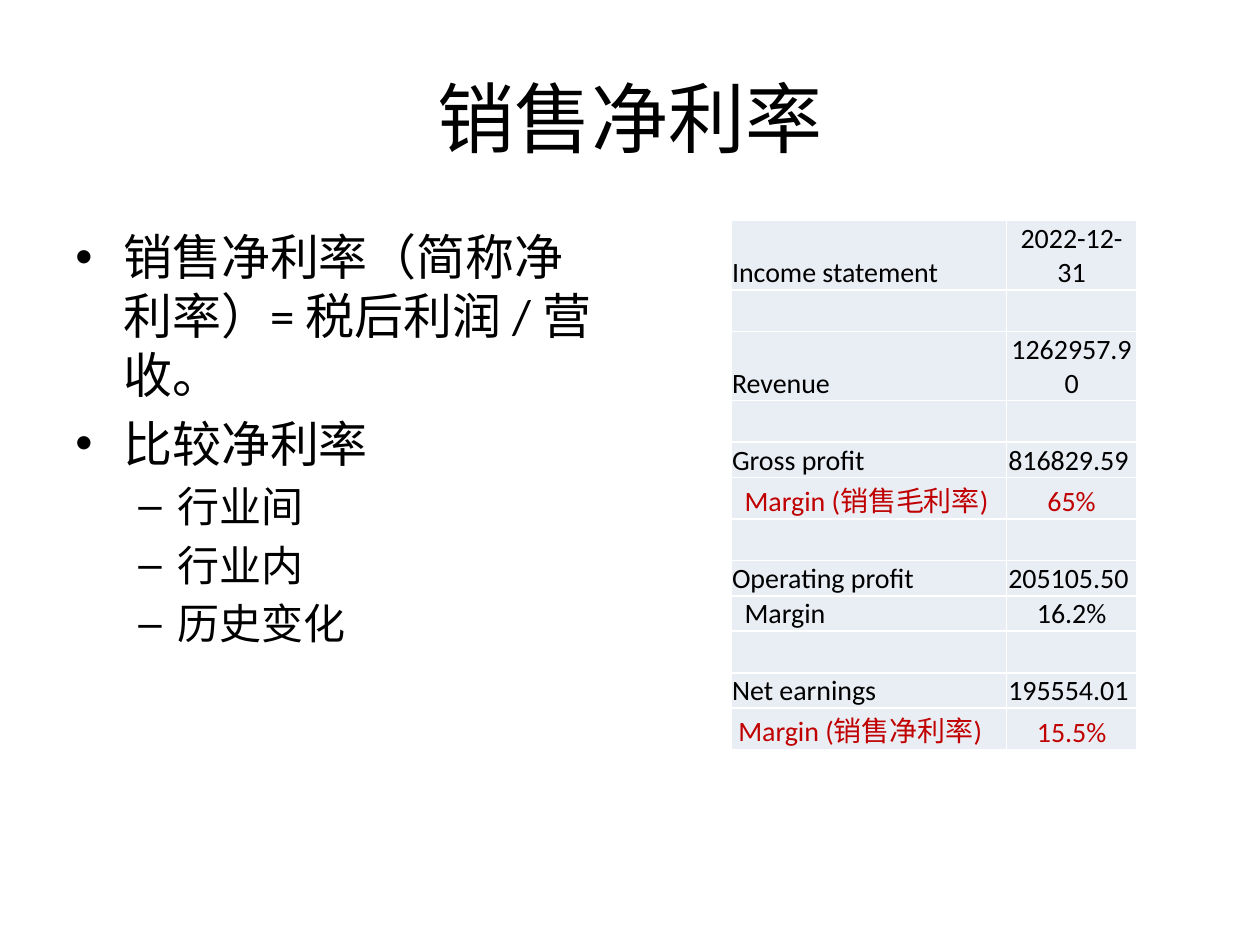
from pptx import Presentation
from pptx.dml.color import RGBColor
from pptx.enum import text
from pptx.util import Inches, Pt
from lxml import etree

BLACK = RGBColor(0x00, 0x00, 0x00)
RED = RGBColor(0xC0, 0x00, 0x00)
PALE = RGBColor(0xE9, 0xED, 0xF4)
DRAWING = "http://schemas.openxmlformats.org/drawingml/2006/main"
LEFT, CENTER = text.PP_ALIGN.LEFT, text.PP_ALIGN.CENTER

TITLE = "销售净利率"
BULLETS = [
    (0, "销售净利率（简称净利率）= 税后利润 / 营收。"),
    (0, "比较净利率"),
    (1, "行业间"),
    (1, "行业内"),
    (1, "历史变化"),
]
LEVELS = [
    {"bullet": "•", "left": 0.38, "hanging": 0.38, "size": 28},
    {"bullet": "–", "left": 0.81, "hanging": 0.31, "size": 24},
]
TALL, MEDIUM, SHORT = 0.55, 0.33, 0.28
EDGE = 0.01
BLANK = ("", "", MEDIUM, BLACK, EDGE, EDGE)
ROWS = [
    ("Income statement", "2022-12-31", TALL, BLACK, EDGE, EDGE),
    BLANK,
    ("Revenue", "1262957.90", TALL, BLACK, EDGE, EDGE),
    BLANK,
    ("Gross profit", "816829.59", SHORT, BLACK, EDGE, 0.06),
    ("Margin (销售毛利率)", "65%", MEDIUM, RED, 0.11, EDGE),
    BLANK,
    ("Operating profit", "205105.50", SHORT, BLACK, EDGE, 0.06),
    ("Margin", "16.2%", SHORT, BLACK, 0.11, EDGE),
    BLANK,
    ("Net earnings", "195554.01", SHORT, BLACK, EDGE, 0.06),
    ("Margin (销售净利率)", "15.5%", MEDIUM, RED, 0.06, EDGE),
]
COLUMN_WIDTHS = [2.19, 1.03]


def write(paragraph, content, size, color=BLACK, align=LEFT, before=0,
          bullet=None, left=0, hanging=0):
    paragraph.alignment = align
    paragraph.space_before = Pt(before)
    if bullet:
        properties = paragraph._p.get_or_add_pPr()
        properties.set("marL", str(Inches(left)))
        properties.set("indent", str(-Inches(hanging)))
        etree.SubElement(properties, f"{{{DRAWING}}}buFont", typeface="Arial")
        etree.SubElement(properties, f"{{{DRAWING}}}buChar", char=bullet)
    if content:
        run = paragraph.add_run()
        run.text = content
        run.font.size = Pt(size)
        run.font.name = "Calibri"
        run.font.color.rgb = color


def add_box(slide, left, top, width, height, anchor):
    box = slide.shapes.add_textbox(Inches(left), Inches(top), Inches(width), Inches(height))
    frame = box.text_frame
    frame.word_wrap = True
    frame.vertical_anchor = anchor
    return frame


def add_bullets(slide):
    frame = add_box(slide, 0.5, 1.75, 4.42, 4.95, text.MSO_ANCHOR.TOP)
    for index, (level, content) in enumerate(BULLETS):
        paragraph = frame.add_paragraph() if index else frame.paragraphs[0]
        paragraph.level = level
        style = LEVELS[level]
        write(paragraph, content, before=style["size"] * 0.2 if index else 0, **style)


def add_statement(slide):
    height = sum(row[2] for row in ROWS)
    table = slide.shapes.add_table(
        len(ROWS), len(COLUMN_WIDTHS), Inches(5.8), Inches(1.75),
        Inches(sum(COLUMN_WIDTHS)), Inches(height)).table
    table.first_row = False
    table.horz_banding = False
    for column, width in zip(table.columns, COLUMN_WIDTHS):
        column.width = Inches(width)
    for row, (label, value, height, color, indent, right) in zip(table.rows, ROWS):
        row.height = Inches(height)
        formats = [(label, LEFT, indent, EDGE), (value, CENTER, EDGE, right)]
        for cell, (content, align, margin_left, margin_right) in zip(row.cells, formats):
            cell.fill.solid()
            cell.fill.fore_color.rgb = PALE
            cell.vertical_anchor = text.MSO_ANCHOR.BOTTOM
            cell.margin_left = Inches(margin_left)
            cell.margin_right = Inches(margin_right)
            cell.margin_top = Inches(EDGE)
            cell.margin_bottom = 0
            write(cell.text_frame.paragraphs[0], content, 16, color=color, align=align)


def main():
    presentation = Presentation()
    presentation.slide_width = Inches(10)
    presentation.slide_height = Inches(7.5)
    slide = presentation.slides.add_slide(presentation.slide_layouts[6])
    title = add_box(slide, 0.5, 0.3, 9, 1.25, text.MSO_ANCHOR.MIDDLE)
    write(title.paragraphs[0], TITLE, 44, align=CENTER)
    add_bullets(slide)
    add_statement(slide)
    presentation.save("out.pptx")


if __name__ == "__main__":
    main()
